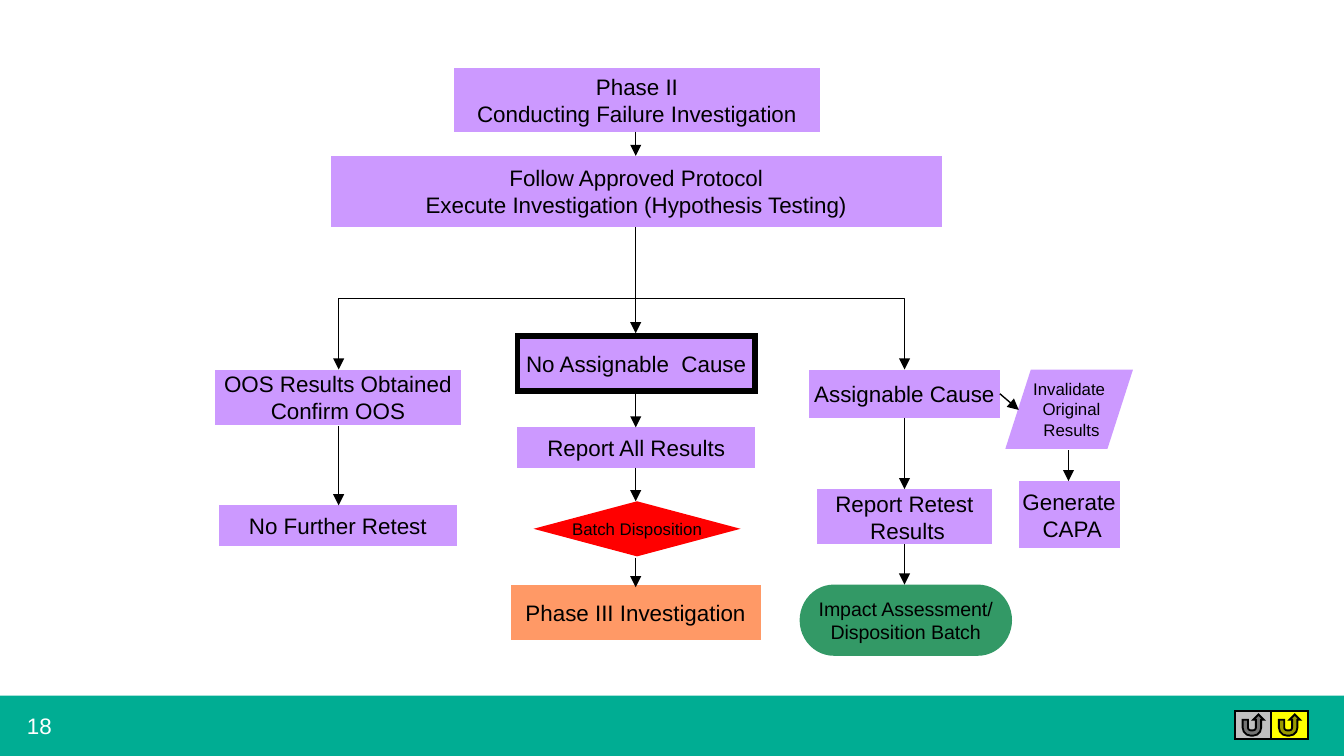
from dataclasses import dataclass

import pptx
import pptx.dml.color
import pptx.enum.shapes
import pptx.enum.text
import pptx.oxml
import pptx.oxml.ns
import pptx.shapes.autoshape
import pptx.shapes.connector
import pptx.slide
import pptx.text.text
import pptx.util

Inches = pptx.util.Inches
Kind = pptx.enum.shapes.MSO_SHAPE
Route = pptx.enum.shapes.MSO_CONNECTOR
Align = pptx.enum.text.PP_ALIGN
Anchor = pptx.enum.text.MSO_ANCHOR

LILAC = "CC99FF"
BLACK = "000000"
WHITE = "FFFFFF"
SLIDE_WIDTH = 10
SLIDE_HEIGHT = SLIDE_WIDTH * 9 / 16
FOOTER_HEIGHT = 0.45
FOOTER_TOP = SLIDE_HEIGHT - FOOTER_HEIGHT
LEFT_X, MIDDLE_X, RIGHT_X, CAPA_X = 2.52, 4.73, 6.73, 7.95
BRANCH_START_X, BRANCH_Y = 4.94, 2.22


@dataclass(frozen=True)
class Step:
    wording: str
    left: float
    top: float
    width: float
    height: float
    kind: Kind = Kind.FLOWCHART_PROCESS
    fill: str = LILAC
    size: float = 12
    border: float = 0


@dataclass(frozen=True)
class Arrow:
    start_x: float
    start_y: float
    end_x: float
    end_y: float
    bent: bool = False


STEPS = [
    Step("Follow Approved Protocol\nExecute Investigation (Hypothesis Testing)", 2.46, 1.16, 4.55, 0.53),
    Step("Phase II\nConducting Failure Investigation", 3.38, 0.51, 2.72, 0.47),
    Step("OOS Results Obtained\nConfirm OOS", 1.6, 2.75, 1.83, 0.41),
    Step("No Further Retest", 1.63, 3.76, 1.77, 0.3),
    Step("No Assignable  Cause", 3.85, 2.5, 1.77, 0.41, border=3),
    Step("Report All Results", 3.85, 3.18, 1.77, 0.3),
    Step("Assignable Cause", 6.02, 2.75, 1.42, 0.36),
    Step("Report Retest\n Results", 6.08, 3.64, 1.3, 0.41),
    Step("Generate\n CAPA", 7.58, 3.58, 0.75, 0.5),
    Step("Phase III Investigation", 3.8, 4.35, 1.86, 0.41, fill="FF9966"),
    Step("Impact Assessment/\nDisposition Batch", 5.95, 4.35, 1.58, 0.53,
         Kind.FLOWCHART_TERMINATOR, "339966", 10.5),
    Step("Invalidate\n Original\n Results", 7.48, 2.75, 0.95, 0.59, Kind.FLOWCHART_DATA, size=9),
    Step("Batch Disposition", 3.97, 3.73, 1.54, 0.41, Kind.FLOWCHART_DECISION, "FF0000", 9),
]

DROPS = [
    (MIDDLE_X, 0.98, 1.16),
    (MIDDLE_X, 1.69, 2.48),
    (MIDDLE_X, 2.93, 3.18),
    (MIDDLE_X, 3.48, 3.73),
    (MIDDLE_X, 4.15, 4.37),
    (LEFT_X, 3.17, 3.76),
    (RIGHT_X, 3.11, 3.64),
    (RIGHT_X, 4.05, 4.35),
    (CAPA_X, 3.35, 3.58),
]

ARROWS = [Arrow(x, top, x, bottom) for x, top, bottom in DROPS] + [
    Arrow(7.44, 2.93, 7.58, 3.05),
    Arrow(BRANCH_START_X, BRANCH_Y, LEFT_X, 2.75, bent=True),
    Arrow(BRANCH_START_X, BRANCH_Y, RIGHT_X, 2.75, bent=True),
]


def color(value: str) -> pptx.dml.color.RGBColor:
    return pptx.dml.color.RGBColor.from_string(value)


def drawing_element(tag: str, attributes: str = "") -> pptx.oxml.xmlchemy.BaseOxmlElement:
    return pptx.oxml.parse_xml(f'<a:{tag} {pptx.oxml.ns.nsdecls("a")} {attributes}/>')


def write(frame: pptx.text.text.TextFrame, wording: str, size: float, ink: str, align: Align) -> None:
    frame.text = wording
    frame.vertical_anchor = Anchor.MIDDLE
    for paragraph in frame.paragraphs:
        paragraph.alignment = align
        for run in paragraph.runs:
            run.font.name = "Arial"
            run.font.size = pptx.util.Pt(size)
            run.font.color.rgb = color(ink)


def draw_shape(slide: pptx.slide.Slide, step: Step) -> pptx.shapes.autoshape.Shape:
    shape = slide.shapes.add_shape(
        step.kind, Inches(step.left), Inches(step.top), Inches(step.width), Inches(step.height))
    shape.shadow.inherit = False
    shape.fill.solid()
    shape.fill.fore_color.rgb = color(step.fill)
    if step.border:
        shape.line.color.rgb = color(BLACK)
        shape.line.width = pptx.util.Pt(step.border)
        outline = shape.element.spPr.find(pptx.oxml.ns.qn("a:ln"))
        outline.append(drawing_element("miter", 'lim="800000"'))
    else:
        shape.line.fill.background()
    if step.wording:
        write(shape.text_frame, step.wording, step.size, BLACK, Align.CENTER)
        shape.text_frame.word_wrap = False
    return shape


def draw_arrow(slide: pptx.slide.Slide, arrow: Arrow) -> pptx.shapes.connector.Connector:
    connector = slide.shapes.add_connector(
        Route.ELBOW if arrow.bent else Route.STRAIGHT,
        Inches(arrow.start_x), Inches(arrow.start_y), Inches(arrow.end_x), Inches(arrow.end_y))
    connector.line.color.rgb = color(BLACK)
    connector.line.width = pptx.util.Pt(0.75)
    properties = connector.element.spPr
    if arrow.bent:
        properties.find(pptx.oxml.ns.qn("a:prstGeom")).set("prst", "bentConnector2")
    properties.find(pptx.oxml.ns.qn("a:ln")).append(drawing_element("tailEnd", 'type="triangle"'))
    properties.append(drawing_element("effectLst"))
    return connector


def draw_footer(slide: pptx.slide.Slide) -> None:
    draw_shape(slide, Step("", 0, FOOTER_TOP, SLIDE_WIDTH, FOOTER_HEIGHT, Kind.RECTANGLE, "00AD93"))
    page_number = slide.shapes.add_textbox(
        Inches(0), Inches(FOOTER_TOP), Inches(0.59), Inches(FOOTER_HEIGHT))
    frame = page_number.text_frame
    frame.word_wrap = True
    frame.margin_left = Inches(0.2)
    frame.margin_top = frame.margin_right = frame.margin_bottom = Inches(0)
    write(frame, "18", 12, WHITE, Align.LEFT)
    for left, fill in ((9.19, "C0C0C0"), (9.46, "FFFF00")):
        draw_shape(slide, Step("", left, 5.29, 0.27, 0.21, Kind.ACTION_BUTTON_RETURN, fill, border=1))


def main() -> None:
    deck = pptx.Presentation()
    deck.slide_width = Inches(SLIDE_WIDTH)
    deck.slide_height = Inches(SLIDE_HEIGHT)
    slide = deck.slides.add_slide(deck.slide_layouts[6])
    draw_footer(slide)
    for step in STEPS:
        draw_shape(slide, step)
    for arrow in ARROWS:
        draw_arrow(slide, arrow)
    deck.save("out.pptx")


if __name__ == "__main__":
    main()
